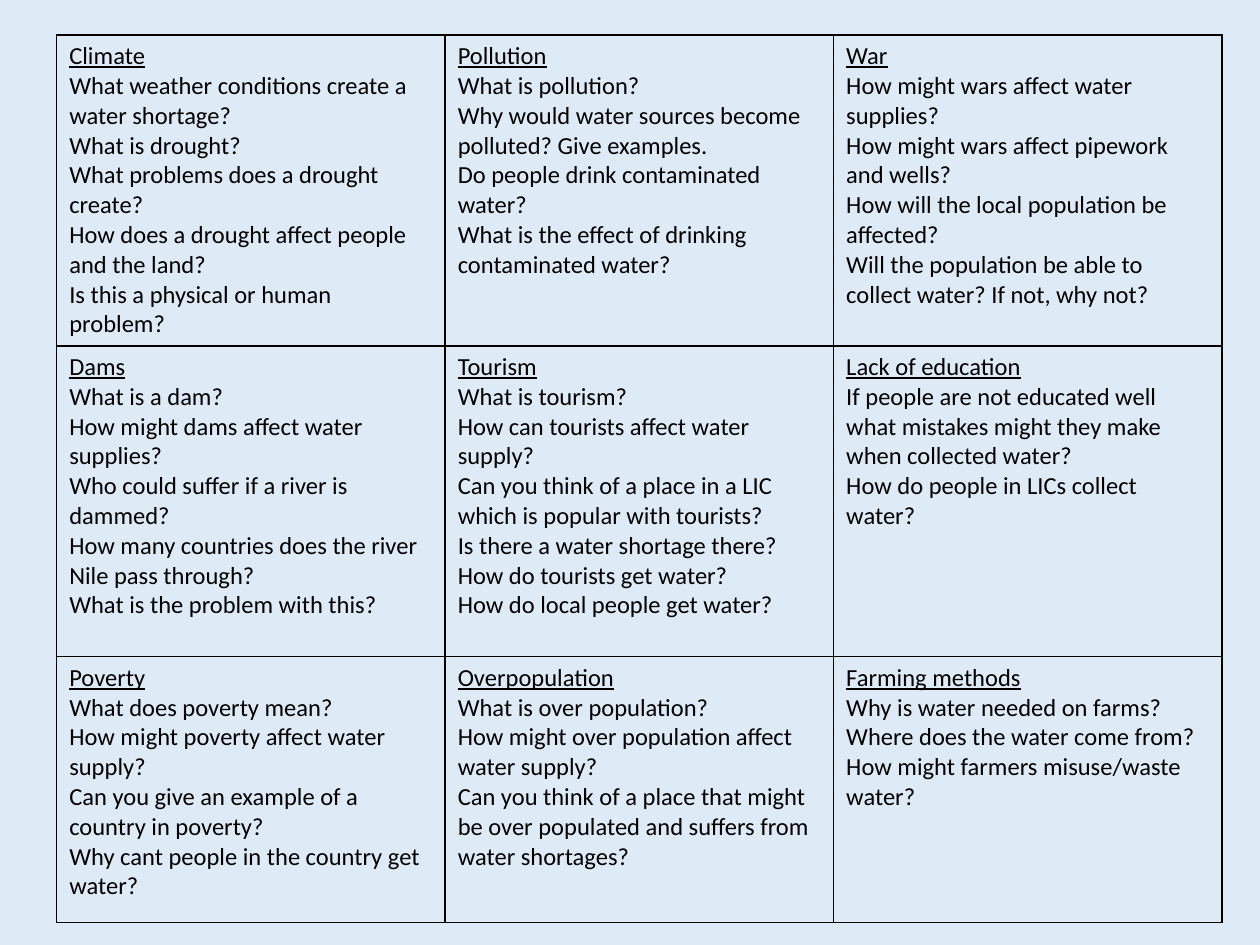
"""Build a slide with a grid of questions about the causes of water shortage."""
from dataclasses import dataclass
from lxml.etree import SubElement
from pptx import Presentation
from pptx.dml.color import RGBColor
from pptx.oxml.ns import qn
from pptx.util import Pt

TOPICS = [
    [
        ("Climate", [
            "What weather conditions create a water shortage?",
            "What is drought?",
            "What problems does a drought create?",
            "How does a drought affect people and the land?",
            "Is this a physical or human problem?",
        ]),
        ("Pollution", [
            "What is pollution?",
            "Why would water sources become polluted? Give examples.",
            "Do people drink contaminated water?",
            "What is the effect of drinking contaminated water?",
        ]),
        ("War", [
            "How might wars affect water supplies?",
            "How might wars affect pipework and wells?",
            "How will the local population be affected?",
            "Will the population be able to collect water? If not, why not?",
        ]),
    ],
    [
        ("Dams", [
            "What is a dam?",
            "How might dams affect water supplies?",
            "Who could suffer if a river is dammed?",
            "How many countries does the river Nile pass through?",
            "What is the problem with this?",
        ]),
        ("Tourism", [
            "What is tourism?",
            "How can tourists affect water supply?",
            "Can you think of a place in a LIC which is popular with tourists?",
            "Is there a water shortage there?",
            "How do tourists get water?",
            "How do local people get water?",
        ]),
        ("Lack of education", [
            "If people are not educated well what mistakes might they make when collected water?",
            "How do people in LICs collect water?",
        ]),
    ],
    [
        ("Poverty", [
            "What does poverty mean?",
            "How might poverty affect water supply?",
            "Can you give an example of a country in poverty?",
            "Why cant people in the country get water?",
        ]),
        ("Overpopulation", [
            "What is over population?",
            "How might over population affect water supply?",
            "Can you think of a place that might be over populated and suffers from water shortages?",
        ]),
        ("Farming methods", [
            "Why is water needed on farms?",
            "Where does the water come from?",
            "How might farmers misuse/waste water?",
        ]),
    ],
]
LEFT, TOP, WIDTH = 32.4, 20, 666
HEIGHTS = [177.6, 177.6, 152]


@dataclass(frozen=True)
class Theme:
    font: str = "Calibri"
    size: int = 14
    ink: str = "000000"
    back: str = "DEEBF7"
    line: int = 1


THEME = Theme()


def paint(fill, color):
    fill.solid()
    fill.fore_color.rgb = RGBColor.from_string(color)


def write(para, text, *, under=False, size=THEME.size, color=THEME.ink):
    run = para.add_run()
    run.text = text
    font = run.font
    font.name, font.size, font.underline = THEME.font, Pt(size), under
    font.bold = False
    font.color.rgb = RGBColor.from_string(color)


def border(cell):
    props = cell._tc.get_or_add_tcPr()
    for side in "LRTB":
        line = SubElement(props, qn(f"a:ln{side}"), w=str(Pt(THEME.line)))
        fill = SubElement(line, qn("a:solidFill"))
        SubElement(fill, qn("a:srgbClr"), val=THEME.ink)


def fill_cell(cell, topic, asks):
    border(cell)
    paint(cell.fill, THEME.back)
    frame = cell.text_frame
    write(frame.paragraphs[0], topic, under=True)
    for ask in asks:
        write(frame.add_paragraph(), ask)


def main():
    deck = Presentation()
    deck.slide_width, deck.slide_height = Pt(720), Pt(540)
    slide = deck.slides.add_slide(deck.slide_layouts[6])
    paint(slide.background.fill, THEME.back)
    count = len(TOPICS[0])
    table = slide.shapes.add_table(
        len(TOPICS), count, Pt(LEFT), Pt(TOP), Pt(WIDTH), Pt(sum(HEIGHTS))
    ).table
    for col in table.columns:
        col.width = Pt(WIDTH / count)
    for row, height, topics in zip(table.rows, HEIGHTS, TOPICS):
        row.height = Pt(height)
        for cell, (topic, asks) in zip(row.cells, topics):
            fill_cell(cell, topic, asks)
    deck.save("out.pptx")


if __name__ == "__main__":
    main()
